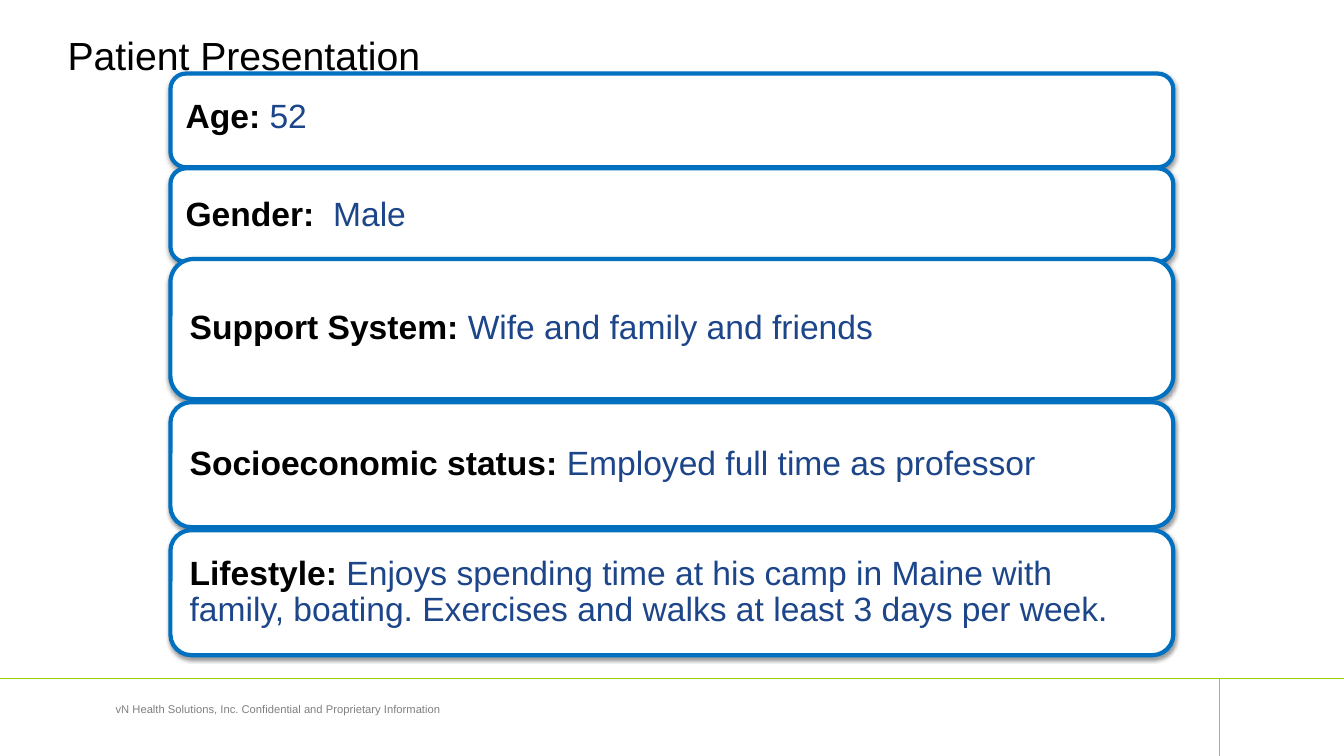
from lxml import etree
from pptx import Presentation
from pptx.dml.color import RGBColor
from pptx.enum.shapes import MSO_CONNECTOR, MSO_SHAPE
from pptx.enum.text import MSO_ANCHOR as ANCHOR, PP_ALIGN as ALIGN
from pptx.oxml import parse_xml
from pptx.oxml.ns import nsdecls, qn
from pptx.util import Inches, Pt

BLACK = RGBColor(0x00, 0x00, 0x00)
WHITE = RGBColor(0xFF, 0xFF, 0xFF)
GREY = RGBColor(0x80, 0x80, 0x80)
GREEN = RGBColor(0x95, 0xD6, 0x00)
BORDER_BLUE = RGBColor(0x00, 0x70, 0xC0)
TEXT_BLUE = RGBColor(0x1C, 0x45, 0x8A)

WIDTH, HEIGHT = Inches(13.333), Inches(7.5)
CARD_LEFT, CARD_WIDTH = 12.68, 74.62  # percent of the slide width
CORNER = 0.167  # corner radius as a share of the card height
CORNER_INSET = 0.29  # share of the radius that the shape adds to its margins

# Label, value, top and height in percent of the slide height,
# text margin in inches, and how far the text is lifted in inches
CARDS = [
    ("Age: ", "52", 9.73, 12.4, 0.15, 0.03),
    ("Gender:  ", "Male", 22.27, 12.4, 0.15, 0),
    ("Support System: ", "Wife and family and friends", 34.27, 18.53, 0.19, 0),
    ("Socioeconomic status: ", "Employed full time as professor", 53.2, 16.53, 0.19, 0),
    ("Lifestyle: ", "Enjoys spending time at his camp in Maine with family, boating. "
     "Exercises and walks at least 3 days per week.", 70.13, 16.53, 0.19, 0),
]


def across(percent):
    return int(WIDTH * percent / 100)


def down(percent):
    return int(HEIGHT * percent / 100)


def add_run(paragraph, text, size, color, bold=False):
    run = paragraph.add_run()
    run.text = text
    run.font.name = "Arial"
    run.font.size = Pt(size)
    run.font.bold = bold
    run.font.color.rgb = color


def set_margins(frame, side, top, bottom):
    frame.margin_left = frame.margin_right = side
    frame.margin_top, frame.margin_bottom = top, bottom


def add_label(slide, text, box, size, color, align, anchor, margin):
    left, top, width, height = box
    frame = slide.shapes.add_textbox(
        across(left), down(top), across(width), down(height)).text_frame
    frame.word_wrap = True
    frame.vertical_anchor = anchor
    set_margins(frame, margin, margin, margin)
    paragraph = frame.paragraphs[0]
    paragraph.alignment = align
    add_run(paragraph, text, size, color)


def add_rule(slide, x1, y1, x2, y2):
    rule = slide.shapes.add_connector(
        MSO_CONNECTOR.STRAIGHT, across(x1), down(y1), across(x2), down(y2))
    rule.line.color.rgb = GREEN
    rule.line.width = Pt(0.5)
    etree.SubElement(rule._element.spPr, qn("a:effectLst"))


def add_shadow(shape):
    shape._element.spPr.append(parse_xml(
        f'<a:effectLst {nsdecls("a")}>'
        f'<a:outerShdw blurRad="{Pt(3.1)}" dist="{Pt(1.6)}" dir="5400000" rotWithShape="0">'
        '<a:srgbClr val="000000"><a:alpha val="38000"/></a:srgbClr>'
        '</a:outerShdw></a:effectLst>'))


def add_card(slide, label, value, top, height, margin, lift):
    card = slide.shapes.add_shape(
        MSO_SHAPE.ROUNDED_RECTANGLE,
        across(CARD_LEFT), down(top), across(CARD_WIDTH), down(height))
    card.adjustments[0] = CORNER
    card.fill.solid()
    card.fill.fore_color.rgb = WHITE
    card.line.color.rgb = BORDER_BLUE
    card.line.width = Pt(3)
    add_shadow(card)

    frame = card.text_frame
    frame.word_wrap = True
    frame.vertical_anchor = ANCHOR.MIDDLE
    inset = int(Inches(margin) - CORNER_INSET * CORNER * down(height))
    set_margins(frame, inset, inset - Inches(lift), inset + Inches(lift))
    paragraph = frame.paragraphs[0]
    paragraph.alignment = ALIGN.LEFT
    paragraph.line_spacing = 0.9
    add_run(paragraph, label, 24, BLACK, bold=True)
    add_run(paragraph, value, 24, TEXT_BLUE)


def main():
    presentation = Presentation()
    presentation.slide_width, presentation.slide_height = WIDTH, HEIGHT
    slide = presentation.slides.add_slide(presentation.slide_layouts[6])

    # Footer
    add_rule(slide, 90.75, 100, 90.75, 89.73)
    add_rule(slide, 0, 89.73, 100, 89.73)
    add_label(slide, "vN Health Solutions, Inc. Confidential and Proprietary Information",
              (3.15, 92.27, 35.1, 5.6), 8, GREY, ALIGN.CENTER, ANCHOR.TOP, Inches(0.05))

    # Title
    add_label(slide, "Patient Presentation", (5.03, 3.73, 71.25, 6.93),
              28, BLACK, ALIGN.LEFT, ANCHOR.MIDDLE, 0)

    # Patient details
    for card in CARDS:
        add_card(slide, *card)

    presentation.save("out.pptx")


if __name__ == "__main__":
    main()
